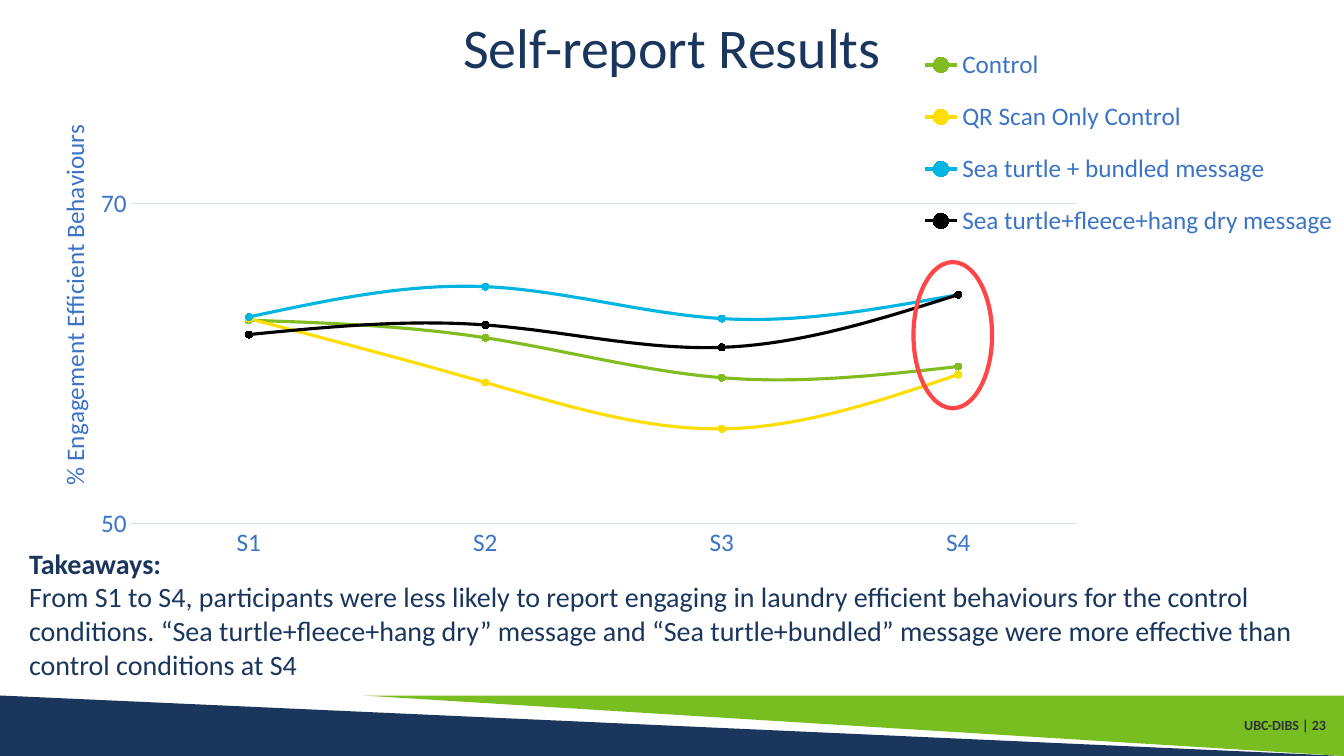
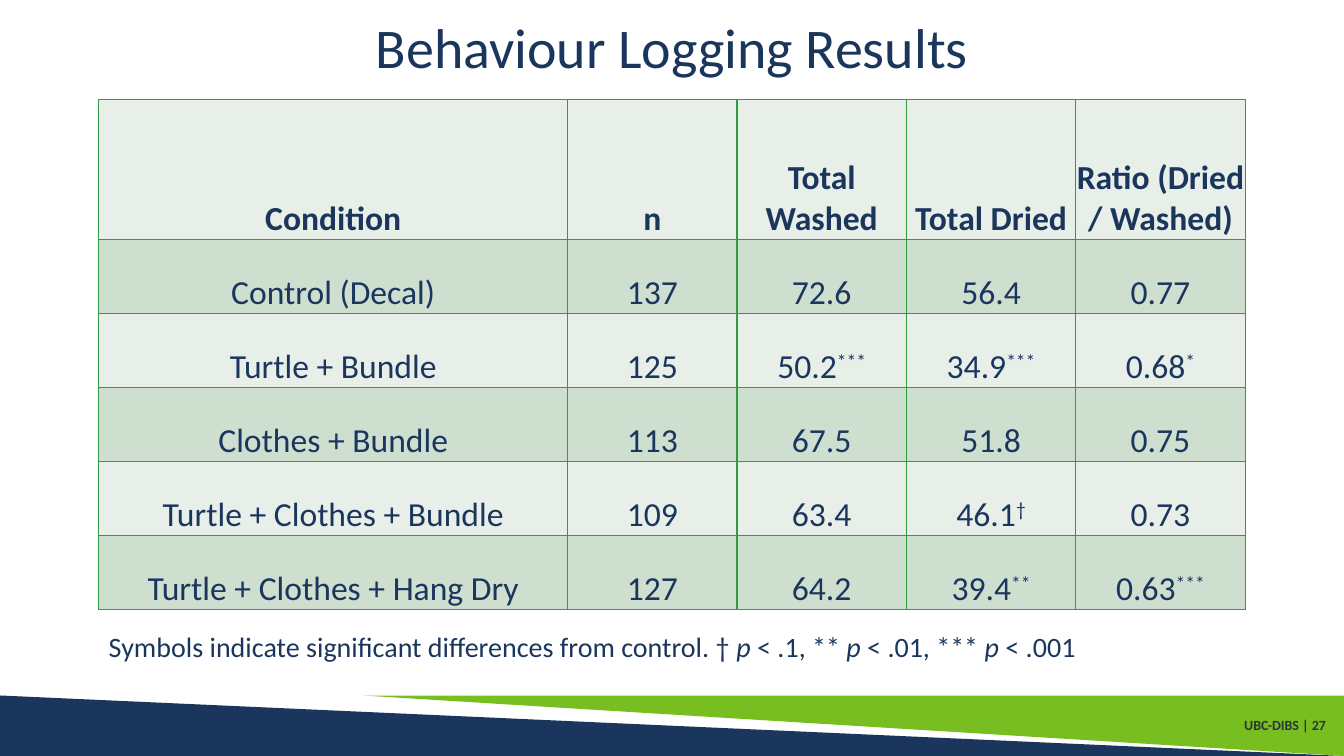
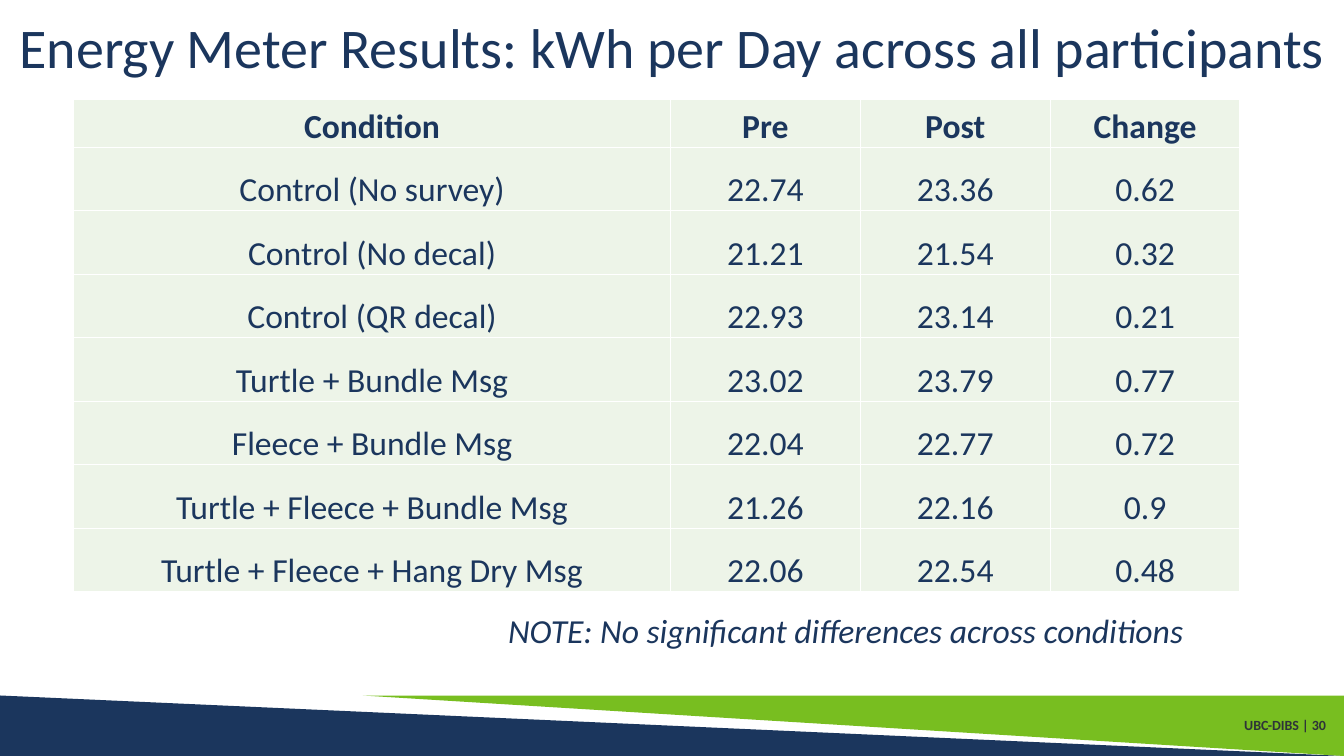
"""Build three slides of laundry study results: a line chart and two tables."""
import dataclasses

import pptx
import pptx.chart.data
import pptx.dml.color
import pptx.enum.chart
import pptx.enum.shapes
import pptx.enum.text
import pptx.oxml
import pptx.oxml.ns
import pptx.util

Inches = pptx.util.Inches
Pt = pptx.util.Pt
Align = pptx.enum.text.PP_ALIGN
Anchor = pptx.enum.text.MSO_ANCHOR
Shape = pptx.enum.shapes.MSO_SHAPE
Color = pptx.dml.color.RGBColor.from_string
qn = pptx.oxml.ns.qn


@dataclasses.dataclass(frozen=True)
class Theme:
    font: str = "Calibri"
    navy: str = "1B365D"
    green: str = "78BE20"
    footer: str = "2E3438"
    axis_text: str = "3B74C6"
    grid: str = "D2DFF2"
    highlight: str = "FF4747"
    table_light: str = "E8EFE9"
    table_dark: str = "CEDECF"
    table_border: str = "319B42"
    table_pale: str = "EDF4E8"
    white: str = "FFFFFF"
    title_size: int = 40
    table_size: int = 24
    body_size: int = 20
    chart_size: int = 18
    footer_size: int = 10


theme = Theme()


def add_run(paragraph, text, size=theme.body_size, color=theme.navy, bold=False, italic=False, raised=False):
    run = paragraph.add_run()
    run.text = text
    run.font.name = theme.font
    run.font.size = Pt(size)
    run.font.color.rgb = Color(color)
    run.font.bold = bold
    run.font.italic = italic
    if raised:
        run._r.get_or_add_rPr().set("baseline", "30000")


def add_box(slide, left, top, width, height, wrap=True, anchor=Anchor.TOP, align=Align.LEFT, spacing=1.0):
    frame = slide.shapes.add_textbox(Inches(left), Inches(top), Inches(width), Inches(height)).text_frame
    frame.word_wrap = wrap
    frame.vertical_anchor = anchor
    frame.paragraphs[0].alignment = align
    frame.paragraphs[0].line_spacing = spacing
    return frame


presentation = pptx.Presentation()
presentation.slide_width = Inches(13.33)
presentation.slide_height = Inches(7.5)

slides = []
for title, number in [
    ("Self-report Results", 23),
    ("Behaviour Logging Results", 27),
    ("Energy Meter Results: kWh per Day across all participants", 30),
]:
    slide = presentation.slides.add_slide(presentation.slide_layouts[6])
    for left, width, color, rotation in [(0, 13.33, theme.navy, 0), (3.6, 9.73, theme.green, 180)]:
        band = slide.shapes.add_shape(
            Shape.RIGHT_TRIANGLE, Inches(left), Inches(6.9), Inches(width), Inches(0.6))
        band.rotation = rotation
        band.shadow.inherit = False
        band.fill.solid()
        band.fill.fore_color.rgb = Color(color)
        band.line.fill.background()
    frame = add_box(slide, 11.74, 7.02, 1.51, 0.37, anchor=Anchor.MIDDLE, align=Align.RIGHT, spacing=0.9)
    add_run(frame.paragraphs[0], f"UBC-DIBS | {number}", size=theme.footer_size, color=theme.footer, bold=True)
    frame = add_box(slide, 0, 0, 13.33, 0.99, anchor=Anchor.MIDDLE, align=Align.CENTER, spacing=0.9)
    add_run(frame.paragraphs[0], title, size=theme.title_size)
    slides.append(slide)

survey_slide, logging_slide, energy_slide = slides

survey_series = [
    ("Control", "81BD20", (62.7, 61.6, 59.1, 59.8)),
    ("QR Scan Only Control", "FEDD00", (62.8, 58.8, 55.9, 59.3)),
    ("Sea turtle + bundled message", "00B5E2", (62.9, 64.8, 62.8, 64.3)),
    ("Sea turtle+fleece+hang dry message", "000000", (61.8, 62.4, 61, 64.3)),
]
chart_data = pptx.chart.data.CategoryChartData()
chart_data.categories = ["S1", "S2", "S3", "S4"]
for name, color, values in survey_series:
    chart_data.add_series(name, values)
chart = survey_slide.shapes.add_chart(
    pptx.enum.chart.XL_CHART_TYPE.LINE_MARKERS,
    Inches(0.39), Inches(0.11), Inches(12.94), Inches(5.69), chart_data).chart
chart.has_title = False
chart.font.name = theme.font
chart.font.size = Pt(theme.chart_size)
chart.font.color.rgb = Color(theme.axis_text)
chart.plots[0].vary_by_categories = False

for series, (name, color, values) in zip(chart.plots[0].series, survey_series):
    series.smooth = True
    series.format.line.color.rgb = Color(color)
    series.format.line.width = Pt(2.25)
    series.marker.style = pptx.enum.chart.XL_MARKER_STYLE.CIRCLE
    series.marker.size = 5
    series.marker.format.fill.solid()
    series.marker.format.fill.fore_color.rgb = Color(color)
    series.marker.format.line.color.rgb = Color(color)

value_axis = chart.value_axis
value_axis.minimum_scale = 50
value_axis.maximum_scale = 80
value_axis.major_unit = 20
value_axis.format.line.fill.background()
for axis in (value_axis, chart.category_axis):
    axis.major_tick_mark = pptx.enum.chart.XL_TICK_MARK.NONE
    axis.minor_tick_mark = pptx.enum.chart.XL_TICK_MARK.NONE
for line in (value_axis.major_gridlines.format.line, chart.category_axis.format.line):
    line.color.rgb = Color(theme.grid)
    line.width = Pt(0.75)

axis_title = value_axis.axis_title
title_frame = axis_title.text_frame
add_run(title_frame.paragraphs[0], "% Engagement Efficient Behaviours",
        size=theme.chart_size, color=theme.axis_text)
title_frame._txBody.bodyPr.set("rot", "-5400000")
title_frame._txBody.bodyPr.set("vert", "horz")

chart.has_legend = True
chart.legend.position = pptx.enum.chart.XL_LEGEND_POSITION.RIGHT
chart.legend.include_in_layout = True
chart.legend.font.name = theme.font
chart.legend.font.size = Pt(theme.chart_size)
chart.legend.font.color.rgb = Color(theme.axis_text)

plot_area = chart._chartSpace.chart.plotArea
for element, next_tag, placement in [
    (plot_area, "c:lineChart", {"x": 0.07, "y": 0.057, "w": 0.725, "h": 0.836}),
    (axis_title._element, "c:overlay", {"x": 0.01, "y": 0.19}),
    (chart.legend._element, "c:overlay", {"x": 0.67, "y": 0.03, "w": 0.33, "h": 0.4}),
]:
    for layout in element.findall(qn("c:layout")):
        element.remove(layout)
    settings = [("layoutTarget", "inner")] if element is plot_area else []
    settings += [(f"{key}Mode", "edge") for key in "xy"]
    settings += list(placement.items())
    body = "".join(f'<c:{key} val="{value}"/>' for key, value in settings)
    element.find(qn(next_tag)).addprevious(pptx.oxml.parse_xml(
        f'<c:layout {pptx.oxml.ns.nsdecls("c")}><c:manualLayout>{body}</c:manualLayout></c:layout>'))

frame = add_box(survey_slide, 0.19, 5.37, 13.14, 1.45)
add_run(frame.paragraphs[0], "Takeaways:", bold=True)
add_run(
    frame.add_paragraph(),
    "From S1 to S4, participants were less likely to report engaging in laundry efficient behaviours "
    "for the control conditions. “Sea turtle+fleece+hang dry” message and “Sea turtle+bundled” message "
    "were more effective than control conditions at S4")

ellipse = survey_slide.shapes.add_shape(Shape.OVAL, Inches(9.06), Inches(2.6), Inches(0.78), Inches(1.45))
ellipse.shadow.inherit = False
ellipse.fill.background()
ellipse.line.color.rgb = Color(theme.highlight)
ellipse.line.width = Pt(3)

logging_rows = [
    ("Condition", "n", "Total Washed", "Total Dried", "Ratio (Dried / Washed)"),
    ("Control (Decal)", "137", "72.6", "56.4", "0.77"),
    ("Turtle + Bundle", "125", "50.2***", "34.9***", "0.68*"),
    ("Clothes + Bundle", "113", "67.5", "51.8", "0.75"),
    ("Turtle + Clothes + Bundle", "109", "63.4", "46.1†", "0.73"),
    ("Turtle + Clothes + Hang Dry", "127", "64.2", "39.4**", "0.63***"),
]
energy_rows = [
    ("Condition", "Pre", "Post", "Change"),
    ("Control (No survey)", "22.74", "23.36", "0.62"),
    ("Control (No decal)", "21.21", "21.54", "0.32"),
    ("Control (QR decal)", "22.93", "23.14", "0.21"),
    ("Turtle + Bundle Msg", "23.02", "23.79", "0.77"),
    ("Fleece + Bundle Msg", "22.04", "22.77", "0.72"),
    ("Turtle + Fleece + Bundle Msg", "21.26", "22.16", "0.9"),
    ("Turtle + Fleece + Hang Dry Msg", "22.06", "22.54", "0.48"),
]
for slide, rows, left, width, height, first_width, header_height, fills, border in [
    (logging_slide, logging_rows, 0.98, 11.37, 5.06, 4.65, 1.39,
     (theme.table_light, theme.table_dark), theme.table_border),
    (energy_slide, energy_rows, 0.73, 11.57, 4.88, 5.92, 0.47, (theme.table_pale,), theme.white),
]:
    column_count = len(rows[0])
    table = slide.shapes.add_table(
        len(rows), column_count, Inches(left), Inches(0.99), Inches(width), Inches(height)).table
    table.horz_banding = False
    for index, column in enumerate(table.columns):
        column.width = Inches((width - first_width) / (column_count - 1) if index else first_width)
    for index, row in enumerate(table.rows):
        row.height = Inches((height - header_height) / (len(rows) - 1) if index else header_height)
        for cell, text in zip(row.cells, rows[index]):
            cell.vertical_anchor = Anchor.BOTTOM
            cell.margin_left = cell.margin_right = cell.margin_top = Inches(0.01)
            cell.margin_bottom = 0
            paragraph = cell.text_frame.paragraphs[0]
            paragraph.alignment = Align.CENTER
            value = text.rstrip("*†")
            add_run(paragraph, value, size=theme.table_size, bold=index == 0)
            if value != text:
                add_run(paragraph, text[len(value):], size=theme.table_size, raised=True)
            properties = cell._tc.get_or_add_tcPr()
            for side in ("lnL", "lnR", "lnT", "lnB"):
                properties.append(pptx.oxml.parse_xml(
                    f'<a:{side} {pptx.oxml.ns.nsdecls("a")} w="{Pt(1)}"><a:solidFill>'
                    f'<a:srgbClr val="{border}"/></a:solidFill></a:{side}>'))
            cell.fill.solid()
            cell.fill.fore_color.rgb = Color(fills[index % len(fills)])

frame = add_box(logging_slide, 0.98, 6.2, 9.88, 0.44, wrap=False)
for text, italic in [
    ("Symbols indicate significant differences from control. † ", False),
    ("p ", True),
    ("< .1, ** ", False),
    ("p", True),
    (" < .01, *** ", False),
    ("p ", True),
    ("< .001", False),
]:
    add_run(frame.paragraphs[0], text, italic=italic)

frame = add_box(energy_slide, 4.94, 6, 7.01, 0.5, wrap=False)
add_run(frame.paragraphs[0], "NOTE: No significant differences across conditions",
        size=theme.table_size, italic=True)

presentation.save("out.pptx")
